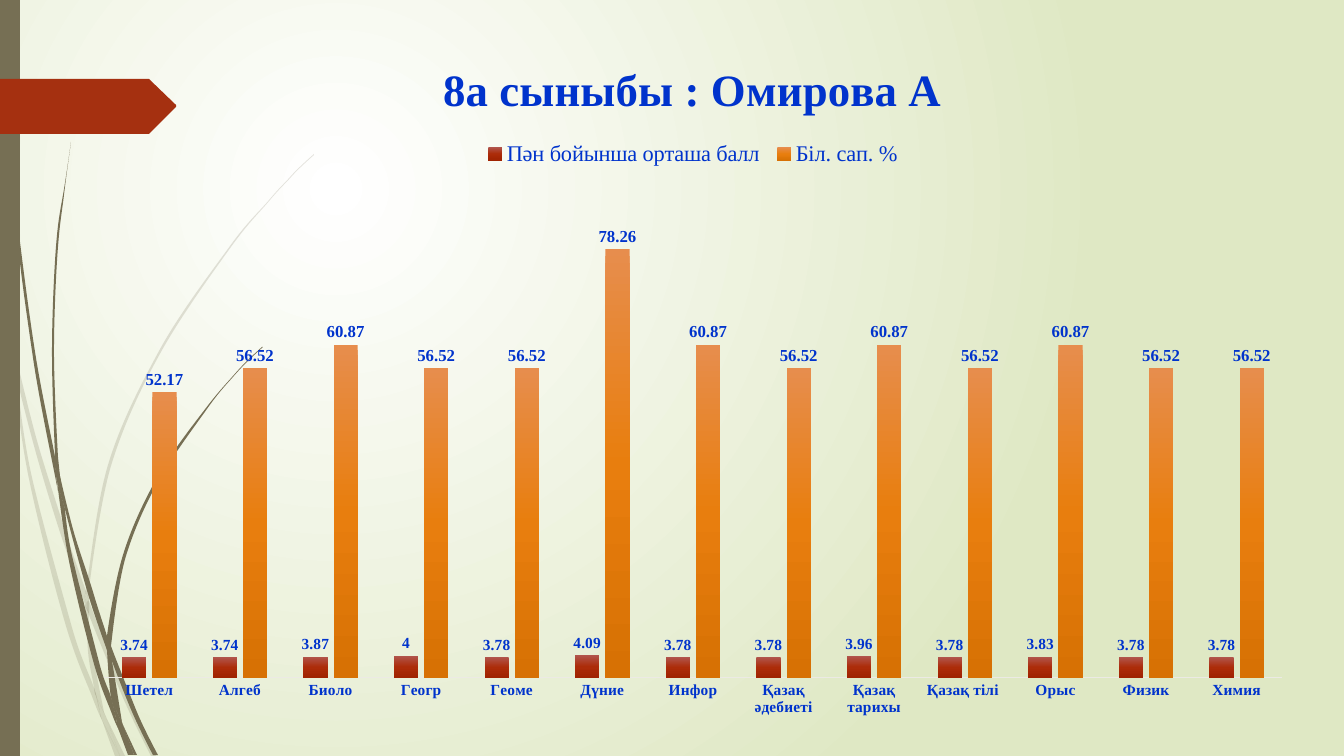
from dataclasses import dataclass

from lxml.etree import SubElement
from pptx import Presentation
from pptx.chart.data import CategoryChartData
from pptx.dml.color import RGBColor
from pptx.enum.chart import XL_CHART_TYPE, XL_LABEL_POSITION, XL_LEGEND_POSITION, XL_TICK_LABEL_POSITION, XL_TICK_MARK
from pptx.enum.shapes import MSO_SHAPE
from pptx.oxml import parse_xml
from pptx.oxml.ns import nsdecls, qn
from pptx.util import Pt

PX = 12192000 / 1344
FONT = "Times New Roman"
COLORS = {
    "olive": "766F54", "red": "A53010", "text": "0033CC", "axis": "ECEAE4",
    "white": "FFFFFF", "green": "DFE8C4", "black": "000000",
}
Points = list[tuple[int, int]]


@dataclass
class Box:
    x: int
    y: int
    w: int
    h: int

    def emu(self) -> tuple[int, ...]:
        return tuple(round(v * PX) for v in (self.x, self.y, self.w, self.h))


@dataclass
class Blade:
    """A piece of grass: one edge out, the other edge back."""
    out: Points
    back: Points


@dataclass
class Measure:
    name: str
    values: list[float]
    gradient: list[tuple[int, str]]
    label_size: int


CHART = Box(80, 34, 1227, 696)
TITLE = Box(435, 53, 498, 54)
LEGEND = Box(478, 139, 430, 30)
PLOT = Box(104, 185, 1178, 493)
TAG = [(176, 107), (149, 134), (0, 134), (0, 79), (149, 79), (176, 105)]

PALE_GRASS = [
    Blade([(11, 353), (9, 325), (0, 284)], [(0, 301), (10, 347)]),
    Blade([(14, 348), (17, 379), (36, 453), (58, 526), (85, 604)],
          [(86, 591), (63, 524), (36, 437), (14, 348)]),
    Blade([(89, 601), (89, 615), (124, 700), (151, 756)], [(156, 756), (128, 698), (93, 612)]),
    Blade([(106, 717), (120, 756)], [(125, 756)]),
    Blade([(11, 353), (28, 474), (66, 626), (93, 699), (102, 720)],
          [(100, 713), (94, 688), (71, 624), (31, 473), (17, 379)]),
    Blade([(85, 604), (88, 651), (94, 688), (97, 698), (106, 717)],
          [(104, 712), (92, 651), (89, 615), (89, 613)]),
    Blade([(314, 154), (291, 176), (270, 199), (230, 246), (159, 351), (108, 465), (86, 589),
           (86, 591), (89, 601)],
          [(89, 589), (111, 466), (161, 352), (231, 247), (270, 200), (292, 176), (314, 155)]),
    Blade([(102, 720), (115, 756)], [(120, 756)]),
    Blade([(86, 591), (85, 604), (89, 613)], [(89, 615), (89, 601)]),
    Blade([(94, 688), (100, 713), (102, 720), (120, 756)], [(106, 717), (97, 698)]),
]
DARK_GRASS = [
    Blade([(3, 0), (4, 48), (7, 111), (17, 235), (33, 358), (56, 481), (57, 485)],
          [(55, 461), (55, 457), (36, 358), (19, 234), (8, 110), (5, 48), (4, 0)]),
    Blade([(60, 476), (65, 509), (89, 597), (107, 650)],
          [(107, 638), (107, 636), (94, 595), (75, 536), (60, 476)]),
    Blade([(111, 646), (112, 661), (133, 714), (153, 755)], [(158, 755), (137, 712), (114, 654)]),
    Blade([(57, 481), (69, 561), (94, 664), (112, 714), (118, 728)],
          [(117, 723), (111, 697), (99, 662), (73, 560), (65, 509)]),
    Blade([(71, 142), (63, 195), (56, 247), (52, 352), (55, 453), (60, 476)],
          [(58, 457), (54, 352), (58, 247), (64, 195), (71, 142)]),
    Blade([(123, 725), (134, 755)], [(137, 755)]),
    Blade([(55, 453), (55, 457), (57, 481), (65, 509)], [(60, 476)]),
    Blade([(262, 347), (247, 361), (233, 376), (206, 408), (157, 478), (123, 555), (107, 636),
           (111, 646)],
          [(112, 638), (126, 556), (159, 480), (207, 409), (233, 377), (247, 362), (263, 347)]),
    Blade([(118, 728), (128, 755)], [(132, 755)]),
    Blade([(107, 650), (111, 697), (117, 712), (123, 725)], [(122, 722), (112, 661), (110, 656)]),
    Blade([(107, 636), (107, 650), (110, 656)], [(112, 661), (111, 646)]),
    Blade([(111, 697), (117, 723), (118, 728), (131, 755)], [(134, 755), (123, 725), (117, 712)]),
]

SUBJECTS = ["Шетел", "Алгеб", "Биоло", "Геогр", "Геоме", "Дүние", "Инфор", "Қазақ әдебиеті",
            "Қазақ тарихы", "Қазақ тілі ", "Орыс", "Физик", "Химия"]
MEASURES = [
    Measure("Пән бойынша орташа балл",
            [3.74, 3.74, 3.87, 4, 3.78, 4.09, 3.78, 3.78, 3.96, 3.78, 3.83, 3.78, 3.78],
            [(0, "B1554C"), (50, "AC2C09"), (100, "A02301")], 11),
    Measure("Біл. сап. %",
            [52.17, 56.52, 60.87, 56.52, 56.52, 78.26, 60.87, 56.52, 60.87, 56.52, 60.87, 56.52, 56.52],
            [(0, "E78D4D"), (50, "E87E0E"), (100, "D77104")], 12),
]


def rgb(name: str) -> RGBColor:
    return RGBColor.from_string(COLORS[name])


def format_font(font, size: int, color: str = "text", bold: bool = False, name: str = FONT) -> None:
    font.size, font.bold, font.name = Pt(size), bold, name
    font.color.rgb = rgb(color)


def put_text(tf, text: str, **style) -> None:
    r = tf.paragraphs[0].add_run()
    r.text = text
    format_font(r.font, **style)


def set_gradient(fill, element, stops: list[tuple[int, str]], direction: str) -> None:
    fill.gradient()
    grad = element.find(".//" + qn("a:gradFill"))
    marks = "".join(f'<a:gs pos="{pos * 1000}"><a:srgbClr val="{color}"/></a:gs>' for pos, color in stops)
    grad.getparent().replace(grad, parse_xml(
        f'<a:gradFill {nsdecls("a")} rotWithShape="1"><a:gsLst>{marks}</a:gsLst>{direction}</a:gradFill>'))


def paint(sp, color: str, opacity: int = 100) -> None:
    sp.shadow.inherit = False
    sp.fill.solid()
    sp.fill.fore_color.rgb = rgb(color)
    sp.line.fill.background()
    if opacity < 100:
        SubElement(sp._element.find(".//" + qn("a:srgbClr")), qn("a:alpha"), val=str(opacity * 1000))


def draw_outline(shapes, points: Points):
    builder = shapes.build_freeform(*points[0], scale=PX)
    builder.add_line_segments(points[1:], close=True)
    return builder.convert_to_shape()


def draw_blade(shapes, blade: Blade, opacity: int) -> None:
    sp = draw_outline(shapes, blade.out + blade.back)
    paint(sp, "olive", opacity)
    # Bend each straight side into a curve that runs smoothly along its edge
    nodes = list(sp._element.iter(qn("a:pt")))
    spots = [(int(n.get("x")), int(n.get("y"))) for n in nodes]
    turn = len(blade.out)
    corners = {0, turn - 1, turn, len(spots) - 1}
    slopes = [(0, 0) if i in corners else
              tuple((b - a) / 6 for a, b in zip(spots[i - 1], spots[i + 1]))
              for i in range(len(spots))]
    for i in range(1, len(spots)):
        (x0, y0), (x1, y1), (u0, v0), (u1, v1) = spots[i - 1], spots[i], slopes[i - 1], slopes[i]
        bend = [(x0 + u0, y0 + v0), (x1 - u1, y1 - v1), (x1, y1)]
        marks = "".join(f'<a:pt x="{round(x)}" y="{round(y)}"/>' for x, y in bend)
        side = nodes[i].getparent()
        side.getparent().replace(side, parse_xml(f'<a:cubicBezTo {nsdecls("a")}>{marks}</a:cubicBezTo>'))
    # Finer units keep the bends exact


def place_in_chart(element, box: Box, inner: bool = False) -> None:
    for old in element.findall(qn("c:layout")):
        element.remove(old)
    parts = {"x": (box.x - CHART.x) / CHART.w, "y": (box.y - CHART.y) / CHART.h,
             "w": box.w / CHART.w, "h": box.h / CHART.h}
    target = '<c:layoutTarget val="inner"/>' if inner else ""
    sizes = "".join(f'<c:{key} val="{value:.4f}"/>' for key, value in parts.items())
    layout = parse_xml(f'<c:layout {nsdecls("c")}><c:manualLayout>{target}<c:xMode val="edge"/>'
                       f'<c:yMode val="edge"/>{sizes}</c:manualLayout></c:layout>')
    overlay = element.find(qn("c:overlay"))
    if overlay is None:
        element.insert(0, layout)
    else:
        overlay.addprevious(layout)


def draw_chart(shapes) -> None:
    data = CategoryChartData()
    data.categories = SUBJECTS
    for m in MEASURES:
        data.add_series(m.name, m.values)
    chart = shapes.add_chart(XL_CHART_TYPE.COLUMN_CLUSTERED, *CHART.emu(), data).chart
    format_font(chart.font, 10, "black", name="TeX Gyre Adventor")

    # Title and legend
    put_text(chart.chart_title.text_frame, "8а сыныбы : Омирова А", size=32, bold=True)
    place_in_chart(chart.chart_title._element, TITLE)
    chart.has_legend = True
    chart.legend.position = XL_LEGEND_POSITION.TOP
    chart.legend.include_in_layout = False
    format_font(chart.legend.font, 16)
    place_in_chart(chart.legend._element, LEGEND)

    # Axes
    cat, val = chart.category_axis, chart.value_axis
    cat.major_tick_mark = val.major_tick_mark = XL_TICK_MARK.NONE
    cat.tick_label_position = XL_TICK_LABEL_POSITION.NEXT_TO_AXIS
    cat.format.line.color.rgb = rgb("axis")
    cat.format.line.width = Pt(0.75)
    format_font(cat.tick_labels.font, 11, bold=True)
    val.minimum_scale, val.maximum_scale = 0, 90
    val.has_major_gridlines = val.visible = False

    # Columns
    plot = chart.plots[0]
    plot.gap_width, plot.overlap, plot.vary_by_categories = 150, -25, False
    for m, series in zip(MEASURES, plot.series):
        set_gradient(series.format.fill, series._element, m.gradient, '<a:lin ang="5400000" scaled="0"/>')
        labels = series.data_labels
        labels.show_value = True
        labels.position = XL_LABEL_POSITION.OUTSIDE_END
        format_font(labels.font, m.label_size, bold=True)
    place_in_chart(chart._chartSpace.find(".//" + qn("c:plotArea")), PLOT, inner=True)


def main() -> None:
    prs = Presentation()
    prs.slide_width, prs.slide_height = round(1344 * PX), round(756 * PX)
    s = prs.slides.add_slide(prs.slide_layouts[6])
    set_gradient(s.background.fill, s._element, [(0, COLORS["white"]), (100, COLORS["green"])],
                 '<a:path path="circle"><a:fillToRect l="50000" t="50000" r="100000" b="100000"/></a:path>')

    # Grass, side strip and tag
    for grass, opacity in ((PALE_GRASS, 20), (DARK_GRASS, 100)):
        for blade in grass:
            draw_blade(s.shapes, blade, opacity)
    paint(s.shapes.add_shape(MSO_SHAPE.RECTANGLE, *Box(0, 0, 20, 756).emu()), "olive")
    paint(draw_outline(s.shapes, TAG), "red")

    draw_chart(s.shapes)
    prs.save("out.pptx")


if __name__ == "__main__":
    main()
